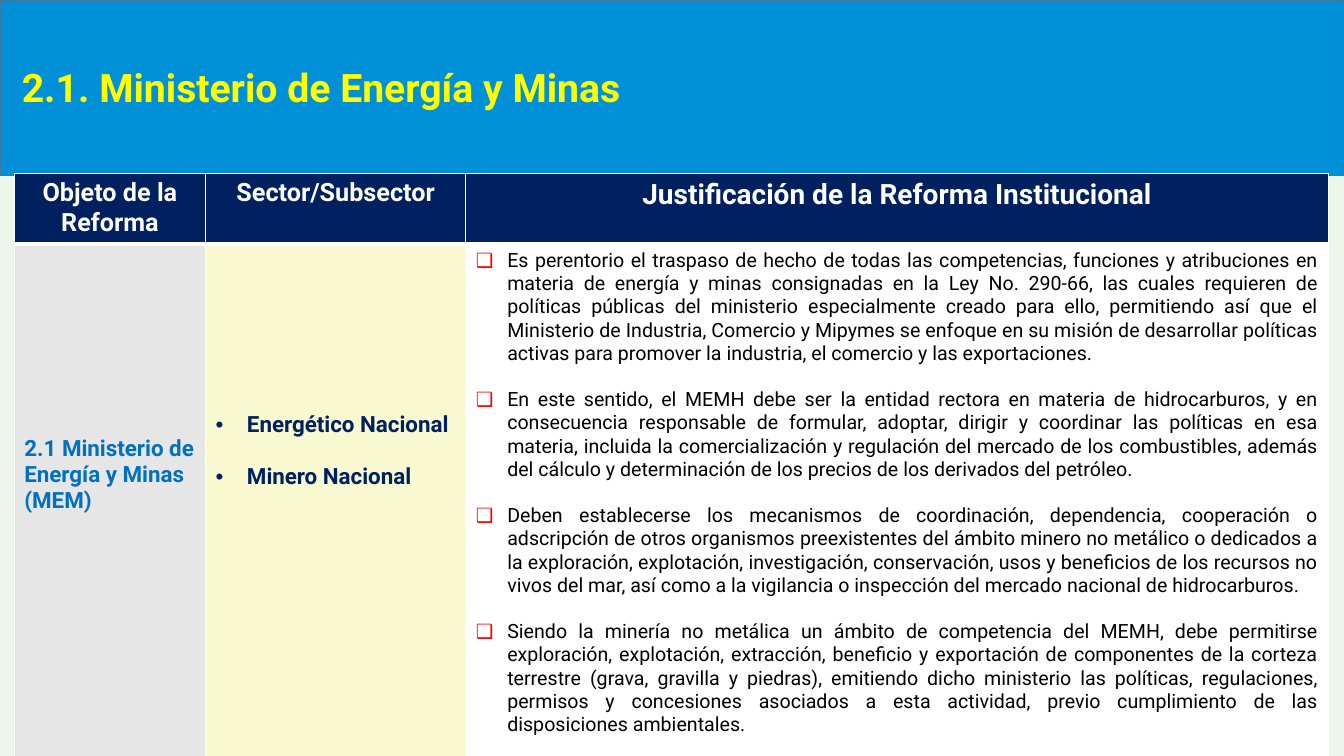
from lxml import etree
from pptx import Presentation
from pptx.dml.color import RGBColor
from pptx.enum.shapes import MSO_SHAPE
from pptx.enum.text import PP_ALIGN
from pptx.oxml.ns import qn
from pptx.util import Cm, Pt

RECT = MSO_SHAPE.RECTANGLE
LEFT, MID, JUST = PP_ALIGN.LEFT, PP_ALIGN.CENTER, PP_ALIGN.JUSTIFY
FONT = "Roboto"
WHITE, NAVY = "FFFFFF", "002060"

TITLE = "2.1. Ministerio de Energía y Minas"
HEADS = [
    ("Objeto de la Reforma", 18),
    ("Sector/Subsector", 18),
    ("Justificación de la Reforma Institucional", 20),
]
REASONS = [
    "Es perentorio el traspaso de hecho de todas las competencias, funciones y "
    "atribuciones en materia de energía y minas consignadas en la Ley No. 290-66, "
    "las cuales requieren de políticas públicas del ministerio especialmente creado "
    "para ello, permitiendo así que el Ministerio de Industria, Comercio y Mipymes "
    "se enfoque en su misión de desarrollar políticas activas para promover la "
    "industria, el comercio y las exportaciones.",
    "En este sentido, el MEMH debe ser la entidad rectora en materia de "
    "hidrocarburos, y en consecuencia responsable de formular, adoptar, dirigir y "
    "coordinar las políticas en esa materia, incluida la comercialización y "
    "regulación del mercado de los combustibles, además del cálculo y determinación "
    "de los precios de los derivados del petróleo.",
    "Deben establecerse los mecanismos de coordinación, dependencia, cooperación o "
    "adscripción de otros organismos preexistentes del ámbito minero no metálico o "
    "dedicados a la exploración, explotación, investigación, conservación, usos y "
    "beneficios de los recursos no vivos del mar, así como a la vigilancia o "
    "inspección del mercado nacional de hidrocarburos.",
    "Siendo la minería no metálica un ámbito de competencia del MEMH, debe "
    "permitirse exploración, explotación, extracción, beneficio y exportación de "
    "componentes de la corteza terrestre (grava, gravilla y piedras), emitiendo "
    "dicho ministerio las políticas, regulaciones, permisos y concesiones asociados "
    "a esta actividad, previo cumplimiento de las disposiciones ambientales.",
]
BODY = [
    dict(lines=["2.1 Ministerio de Energía y Minas (MEM)"], fill="E7E6E6",
         top=4.82, size=16, color="0070C0", bold=True),
    dict(lines=["Energético Nacional", "Minero Nacional"], fill="F8F9D1",
         top=4.23, size=16, color=NAVY, bold=True, mark=("•", NAVY), gap=18.7),
    dict(lines=REASONS, fill=WHITE, size=14, color="000000",
         align=JUST, mark=("❑", "FF0000"), gap=16.6),
]
COLS = [4.82, 6.56, 21.74]
ROWS = [1.75, 13.31]


def rgb(code):
    return RGBColor.from_string(code)


def paint(item, code):
    item.fill.solid()
    item.fill.fore_color.rgb = rgb(code)


def add_mark(para, sign, code):
    """Give the paragraph a hanging bullet."""
    props = para._p.get_or_add_pPr()
    props.set("marL", str(Cm(0.79)))
    props.set("indent", str(-Cm(0.79)))
    tint = etree.SubElement(props, qn("a:buClr"))
    etree.SubElement(tint, qn("a:srgbClr"), val=code)
    etree.SubElement(props, qn("a:buFont"), typeface="Arial")
    etree.SubElement(props, qn("a:buChar"), char=sign)


def write(frame, lines, size, color, bold=False, align=LEFT, mark=None, gap=0):
    frame.word_wrap = True
    for i, line in enumerate(lines):
        para = frame.paragraphs[0] if i == 0 else frame.add_paragraph()
        if mark:
            add_mark(para, *mark)
        para.alignment = align
        if i:
            para.space_before = Pt(gap)
        run = para.add_run()
        run.text = line
        look = dict(name=FONT, size=Pt(size), bold=bold)
        for key, value in look.items():
            setattr(run.font, key, value)
        run.font.color.rgb = rgb(color)


def edge(cell, top, bottom):
    """Draw white borders; the sides are 1 pt wide."""
    props = cell._tc.get_or_add_tcPr()
    widths = dict(lnL=1, lnR=1, lnT=top, lnB=bottom)
    for i, (side, width) in enumerate(widths.items()):
        line = etree.Element(qn("a:" + side), w=str(Pt(width)))
        fill = etree.SubElement(line, qn("a:solidFill"))
        etree.SubElement(fill, qn("a:srgbClr"), val=WHITE)
        props.insert(i, line)


def add_band(slide, width):
    band = slide.shapes.add_shape(RECT, 0, 0, width, Cm(4.42))
    band.shadow.inherit = False
    paint(band, "0090D7")
    band.line.color.rgb = rgb("43739E")
    band.line.width = Pt(1)
    box = slide.shapes.add_textbox(Cm(0.3), Cm(1.47), Cm(30.56), Cm(1.47))
    write(box.text_frame, [TITLE], 28, "FFFF00", bold=True)


def add_grid(slide):
    frame = slide.shapes.add_table(2, 3, Cm(0.36), Cm(4.37),
                                   Cm(sum(COLS)), Cm(sum(ROWS)))
    table = frame.table
    table.horz_banding = False
    for col, width in zip(table.columns, COLS):
        col.width = Cm(width)
    for row, height in zip(table.rows, ROWS):
        row.height = Cm(height)
    heads = [dict(lines=[text], size=size, color=WHITE, bold=True,
                  align=MID, fill=NAVY) for text, size in HEADS]
    for r, (row, sides) in enumerate(zip((heads, BODY), ((1, 3), (3, 1)))):
        for c, item in enumerate(row):
            cell = table.cell(r, c)
            form = dict(item)
            paint(cell, form.pop("fill"))
            edge(cell, *sides)
            cell.margin_top = Cm(form.pop("top", 0.13))
            write(cell.text_frame, **form)


def main():
    deck = Presentation()
    deck.slide_width, deck.slide_height = Cm(33.87), Cm(19.05)
    slide = deck.slides.add_slide(deck.slide_layouts[6])
    paint(slide.background, "ECF6EB")
    add_band(slide, deck.slide_width)
    add_grid(slide)
    deck.save("out.pptx")


if __name__ == "__main__":
    main()
